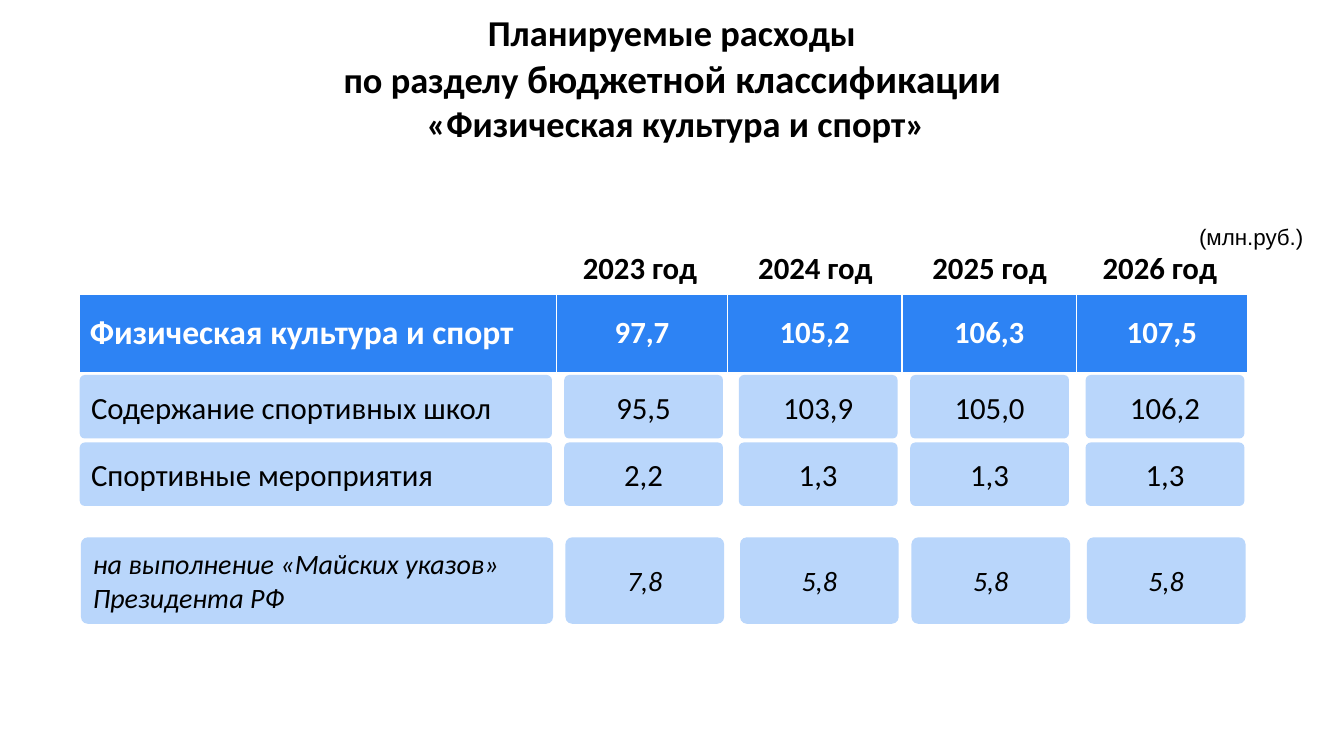
from pptx import Presentation
from pptx.dml.color import RGBColor
from pptx.enum.shapes import MSO_SHAPE as Shape
from pptx.enum.text import MSO_ANCHOR as Anchor, MSO_AUTO_SIZE as Fit, PP_ALIGN as Align
from pptx.util import Cm, Pt

BLUE = RGBColor(0x2D, 0x83, 0xF4)
PALE = RGBColor(0xB9, 0xD6, 0xFB)
WHITE = RGBColor(0xFF, 0xFF, 0xFF)
BLACK = RGBColor(0x00, 0x00, 0x00)

TITLE = [
    [("Планируемые расходы", 26)],
    [("по разделу ", 26), ("бюджетной классификации", 28)],
    [(" «Физическая культура и спорт»", 26)],
]
YEARS = ["2023 год", "2024 год", "2025 год", "2026 год"]
TOTAL = ["Физическая культура и спорт", "97,7", "105,2", "106,3", "107,5"]
WIDTHS = [12.02, 4.3, 4.4, 4.4, 4.3]
YEAR_LEFTS = [14.33, 18.75, 23.14, 27.43]
TILES = [(2.01, 11.9), (14.22, 4), (18.62, 4), (22.94, 4), (27.36, 4)]
# top, height, shift to the right, text format, texts
ROWS = [
    (9.45, 1.6, 0, {"size": Pt(22)},
     ["Содержание спортивных школ", "95,5", "103,9", "105,0", "106,2"]),
    (11.15, 1.6, 0, {"size": Pt(22)},
     ["Спортивные мероприятия", "2,2", "1,3", "1,3", "1,3"]),
    (13.54, 2.18, 0.03, {"size": Pt(20), "italic": True},
     ["на выполнение «Майских указов» Президента РФ", "7,8", "5,8", "5,8", "5,8"]),
]


class Page:
    base = {"name": "Calibri", "size": Pt(22), "bold": False, "italic": False}

    def __init__(self, deck):
        self.slide = deck.slides.add_slide(deck.slide_layouts[5])
        self.shapes = self.slide.shapes

    def add_text(self, para, text, align=Align.CENTER, color=BLACK, **form):
        para.alignment = align
        run = para.add_run()
        run.text = text
        for key, value in {**self.base, **form}.items():
            setattr(run.font, key, value)
        run.font.color.rgb = color

    def title(self, box, lines):
        head = self.shapes.title
        for key, value in zip(("left", "top", "width", "height"), box):
            setattr(head, key, Cm(value))
        frame = head.text_frame
        frame.auto_size = Fit.NONE
        frame.word_wrap = False
        frame.vertical_anchor = Anchor.TOP
        for i, line in enumerate(lines):
            para = frame.add_paragraph() if i else frame.paragraphs[0]
            for text, size in line:
                self.add_text(para, text, size=Pt(size), bold=True)

    def label(self, box, text, **form):
        frame = self.shapes.add_textbox(*map(Cm, box)).text_frame
        frame.word_wrap = True
        self.add_text(frame.paragraphs[0], text, **form)

    def tile(self, box, text, fill=None, **form):
        tile = self.shapes.add_shape(Shape.ROUNDED_RECTANGLE, *map(Cm, box))
        tile.adjustments[0] = 0.08
        tile.shadow.inherit = False
        tile.line.fill.background()
        if fill is None:
            tile.fill.background()
        else:
            tile.fill.solid()
            tile.fill.fore_color.rgb = fill
        frame = tile.text_frame
        frame.word_wrap = True
        frame.vertical_anchor = Anchor.MIDDLE
        self.add_text(frame.paragraphs[0], text, **form)

    def total(self, left, top, height, widths, texts):
        box = map(Cm, (left, top, sum(widths), height))
        table = self.shapes.add_table(1, len(widths), *box).table
        for i, (width, text) in enumerate(zip(widths, texts)):
            table.columns[i].width = Cm(width)
            cell = table.cell(0, i)
            cell.fill.solid()
            cell.fill.fore_color.rgb = BLUE
            cell.vertical_anchor = Anchor.MIDDLE
            self.add_text(cell.text_frame.paragraphs[0], text, side(i), WHITE,
                          size=Pt(22 if i else 24), bold=True)


def side(col):
    """Names stand left, figures are centred."""
    return Align.CENTER if col else Align.LEFT


def main():
    deck = Presentation()
    deck.slide_width, deck.slide_height = Cm(33.87), Cm(19.05)
    page = Page(deck)
    page.title((8.3, 0.13, 17.28, 3.69), TITLE)
    page.label((29.21, 5.51, 4.65, 0.94), "(млн.руб.)", name="Arial", size=Pt(16))
    for left, year in zip(YEAR_LEFTS, YEARS):
        page.tile((left, 6.3, 3.6, 0.86), year, bold=True)
    page.total(2.01, 7.42, 1.96, WIDTHS, TOTAL)
    for top, height, shift, form, texts in ROWS:
        for i, ((left, width), text) in enumerate(zip(TILES, texts)):
            page.tile((left + shift, top, width, height), text, PALE,
                      align=side(i), **form)
    deck.save("out.pptx")


if __name__ == "__main__":
    main()
